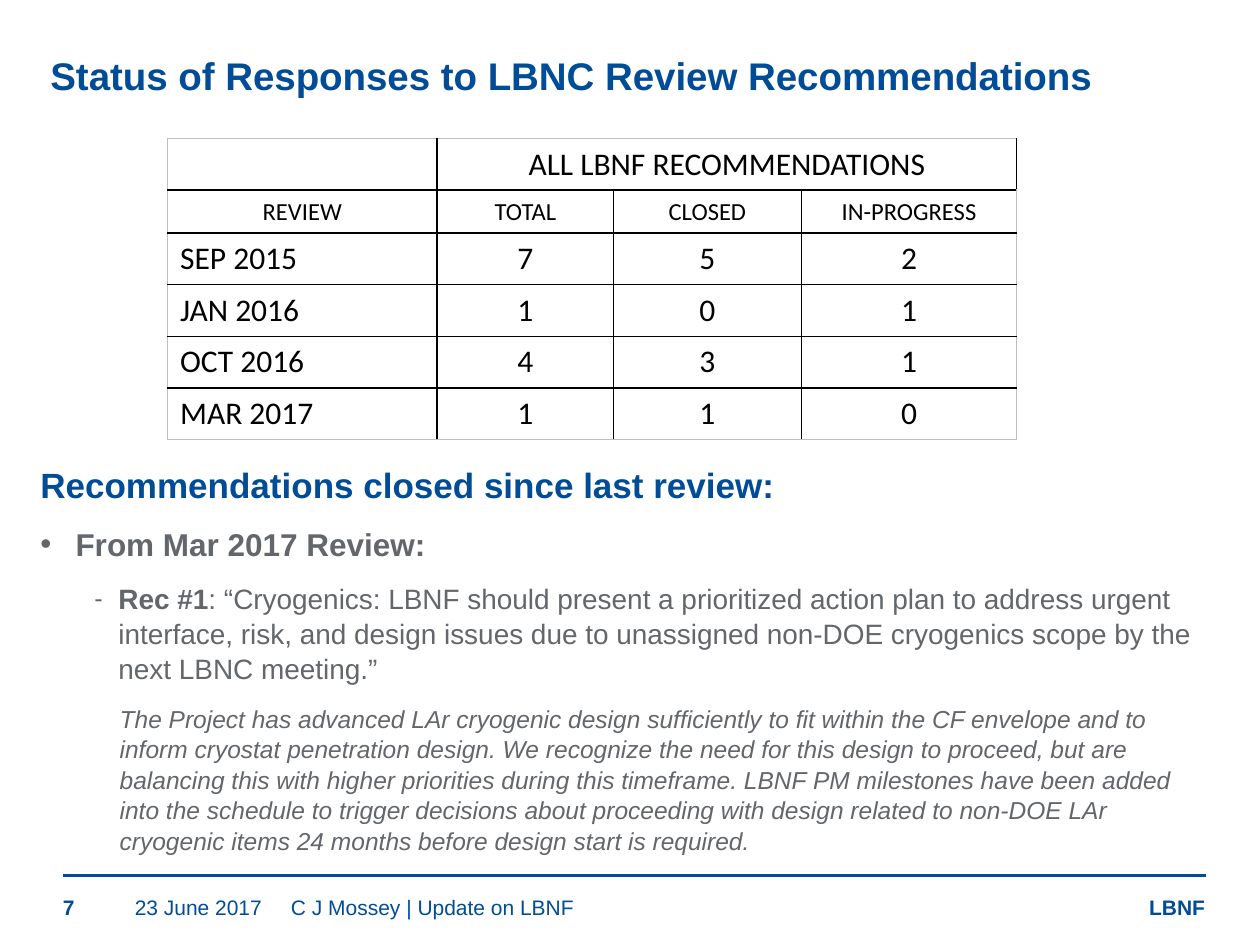
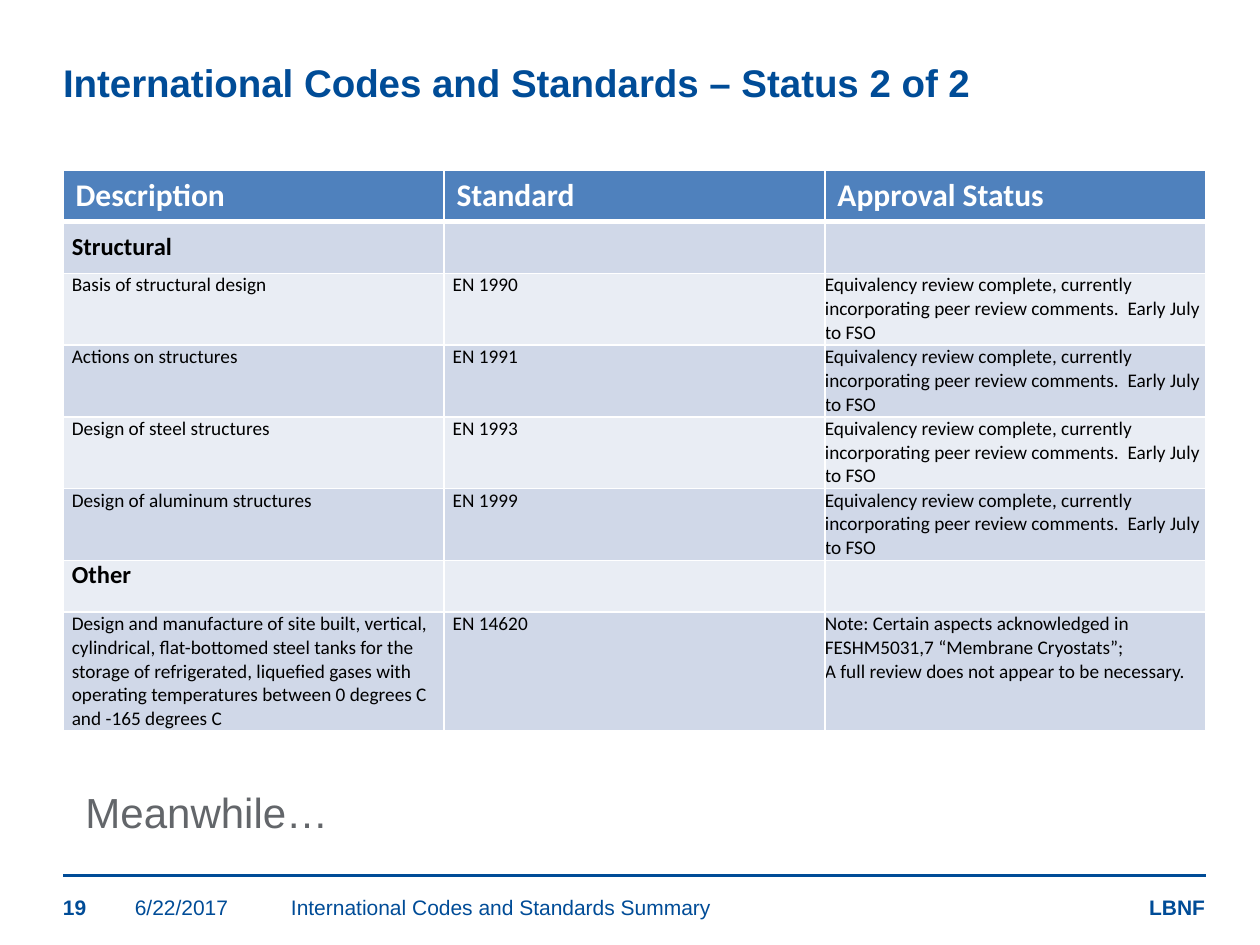
from lxml import etree
from pptx import Presentation
from pptx.dml.color import RGBColor
from pptx.enum import shapes, text
from pptx.oxml import ns
from pptx.util import Inches, Pt

NAVY = RGBColor(0x00, 0x4C, 0x97)
GRAY = RGBColor(0x63, 0x66, 0x6A)
BLACK = RGBColor(0x00, 0x00, 0x00)
WHITE = RGBColor(0xFF, 0xFF, 0xFF)
EDGE = RGBColor(0xBF, 0xBF, 0xBF)
HEADER_BLUE = RGBColor(0x4F, 0x81, 0xBD)
BANDS = (RGBColor(0xD0, 0xD8, 0xE8), RGBColor(0xE9, 0xED, 0xF4))
HEADING_FONT = "Arial"
TABLE_FONT = "Calibri"
LEFT, RIGHT = 0.5, 9.57
CENTER = text.PP_ALIGN.CENTER
TOP, MIDDLE, BOTTOM = (text.MSO_ANCHOR.TOP, text.MSO_ANCHOR.MIDDLE,
                       text.MSO_ANCHOR.BOTTOM)

REVIEWS = [
    ("SEP 2015", "7", "5", "2"),
    ("JAN 2016", "1", "0", "1"),
    ("OCT 2016", "4", "3", "1"),
    ("MAR 2017", "1", "1", "0"),
]
IN_REVIEW = ("Equivalency review complete, currently incorporating peer review "
             "comments.  Early July to FSO")
STANDARDS = [
    ("Structural",),
    ("Basis of structural design", "EN 1990", IN_REVIEW),
    ("Actions on structures", "EN 1991", IN_REVIEW),
    ("Design of steel structures", "EN 1993", IN_REVIEW),
    ("Design of aluminum structures", "EN 1999", IN_REVIEW),
    ("Other",),
    ("Design and manufacture of site built, vertical, cylindrical, flat-bottomed "
     "steel tanks for the storage of refrigerated, liquefied gases with operating "
     "temperatures between 0 degrees C and -165 degrees C", "EN 14620",
     "Note: Certain aspects acknowledged in FESHM5031,7 “Membrane Cryostats”;\n"
     "A full review does not appear to be necessary."),
]
RECOMMENDATION = (": “Cryogenics: LBNF should present a prioritized action plan to "
                  "address urgent interface, risk, and design issues due to unassigned "
                  "non-DOE cryogenics scope by the next LBNC meeting.”")
RESPONSE = ("The Project has advanced LAr cryogenic design sufficiently to fit within "
            "the CF envelope and to inform cryostat penetration design. We recognize "
            "the need for this design to proceed, but are balancing this with higher "
            "priorities during this timeframe. LBNF PM milestones have been added into "
            "the schedule to trigger decisions about proceeding with design related to "
            "non-DOE LAr cryogenic items 24 months before design start is required.")


def add_run(paragraph, words, size, color, bold=False, italic=False, font=HEADING_FONT):
    """Append one formatted run to a paragraph."""
    run = paragraph.add_run()
    run.text = words
    run.font.name = font
    run.font.size = Pt(size)
    run.font.color.rgb = color
    run.font.bold = bold
    run.font.italic = italic


def set_margins(holder, horizontal, vertical):
    """Set the inner margins of a text frame or table cell."""
    holder.margin_left = holder.margin_right = Inches(horizontal)
    holder.margin_top = holder.margin_bottom = Inches(vertical)


def add_text_box(slide, box, anchor=TOP, margins=(0, 0), wrap=True):
    """Add an empty text box and return its text frame."""
    frame = slide.shapes.add_textbox(*map(Inches, box)).text_frame
    frame.word_wrap = wrap
    frame.vertical_anchor = anchor
    set_margins(frame, *margins)
    return frame


def add_title(slide, box, words):
    """Place and format the title placeholder."""
    title = slide.shapes.title
    title.left, title.top, title.width, title.height = map(Inches, box)
    frame = title.text_frame
    frame.auto_size = text.MSO_AUTO_SIZE.NONE
    frame.vertical_anchor = TOP
    set_margins(frame, 0, 0)
    paragraph = frame.paragraphs[0]
    paragraph.alignment = text.PP_ALIGN.LEFT
    add_run(paragraph, words, 22, NAVY, bold=True)


def add_footer(slide, number, date, subject):
    """Draw the rule with the number, date, subject and project name under it."""
    rule = slide.shapes.add_connector(
        shapes.MSO_CONNECTOR.STRAIGHT,
        *map(Inches, (LEFT, 6.95, RIGHT, 6.95)))
    rule.line.color.rgb = NAVY
    rule.line.width = Pt(2)
    etree.SubElement(rule._element.spPr, ns.qn("a:effectLst"))
    for left, width, words, bold in (
            (LEFT, 0.57, number, True), (1.07, 1.24, date, False),
            (2.31, 6.14, subject, False), (9.12, 0.46, "LBNF", True)):
        frame = add_text_box(slide, (left, 7.1, width, 0.2), BOTTOM)
        add_run(frame.paragraphs[0], words, 12, NAVY, bold)


def set_borders(cell, left, right, top, bottom):
    """Draw the four cell borders, each given as a colour and a width."""
    properties = cell._tc.get_or_add_tcPr()
    for side, (color, width) in zip("LRTB", (left, right, top, bottom)):
        line = etree.SubElement(properties, ns.qn(f"a:ln{side}"), w=str(Pt(width)))
        fill = etree.SubElement(line, ns.qn("a:solidFill"))
        etree.SubElement(fill, ns.qn("a:srgbClr"), val=str(color))


def add_table(slide, left, top, widths, heights):
    """Add a table without built-in banding and return it."""
    table = slide.shapes.add_table(
        len(heights), len(widths),
        *map(Inches, (left, top, sum(widths), sum(heights)))).table
    table.first_row = table.horz_banding = False
    for column, width in zip(table.columns, widths):
        column.width = Inches(width)
    for row, height in zip(table.rows, heights):
        row.height = Inches(height)
    return table


def fill_cell(cell, words, size, color=BLACK, bold=False, alignment=None, anchor=TOP):
    """Write the lines of a table cell."""
    cell.vertical_anchor = anchor
    for index, line in enumerate(words.split("\n")):
        frame = cell.text_frame
        paragraph = frame.add_paragraph() if index else frame.paragraphs[0]
        paragraph.alignment = alignment
        if line:
            add_run(paragraph, line, size, color, bold, font=TABLE_FONT)
        else:
            paragraph.font.size = Pt(size)


def add_review_table(slide, left, top):
    """Build the grid of recommendation counts for each review."""
    rows = [("", "ALL LBNF RECOMMENDATIONS", "", ""),
            ("REVIEW", "TOTAL", "CLOSED", "IN-PROGRESS"), *REVIEWS]
    table = add_table(slide, left, top, (2.14, 1.4, 1.49, 1.71),
                      [0.34 if index == 1 else 0.41 for index in range(len(rows))])
    table.cell(0, 1).merge(table.cell(0, 3))
    inner, outer = (BLACK, 1), (EDGE, 1)
    for row, values in enumerate(rows):
        for column, value in enumerate(values):
            cell = table.cell(row, column)
            set_borders(cell,
                        inner if column else outer,
                        inner if column < 3 else outer,
                        inner if row else outer,
                        inner if row < len(rows) - 1 else outer)
            cell.fill.background()
            fill_cell(cell, value, 14 if row == 1 else 18,
                      alignment=CENTER if column or row < 2 else None,
                      anchor=MIDDLE if row < 2 else TOP)


def add_standards_table(slide, left, top):
    """Build the banded table of standards and their approval status."""
    table = add_table(slide, left, top, [(RIGHT - LEFT) / 3] * 3,
                      [0.41, 0.41] + [0.57] * 4 + [0.41, 0.94])
    thin, thick = (WHITE, 1), (WHITE, 3)
    for column, heading in enumerate(("Description", "Standard", "Approval Status")):
        cell = table.cell(0, column)
        set_borders(cell, thin, thin, thin, thick)
        cell.fill.solid()
        cell.fill.fore_color.rgb = HEADER_BLUE
        fill_cell(cell, heading, 18, WHITE, bold=True)
    for index, values in enumerate(STANDARDS):
        is_group = len(values) == 1
        for column in range(3):
            cell = table.cell(index + 1, column)
            set_borders(cell, thin, thin, thin if index else thick, thin)
            cell.fill.solid()
            cell.fill.fore_color.rgb = BANDS[index % 2]
            set_margins(cell, 0.07 if column < 2 else 0, 0)
            fill_cell(cell, values[column] if column < len(values) else "",
                      14 if is_group else 11, bold=is_group,
                      anchor=MIDDLE if index == 0 else TOP)


def add_closed_recommendations(slide, box):
    """Write the outline of recommendations closed since the last review."""
    frame = add_text_box(slide, box, margins=(0, 0.05))
    outline = [
        (0, 0, None, 100, [("Recommendations closed since last review:", 20, NAVY, True)]),
        (0.28, -0.28, "•", 100, [("From Mar 2017 Review:", 18, GRAY, True)]),
        (0.62, -0.19, "-", 90, [("Rec #1", 16, GRAY, True),
                                (RECOMMENDATION, 16, GRAY)]),
        (0.63, 0, None, 100, [(RESPONSE, 14, GRAY, False, True)]),
    ]
    for index, (margin, indent, bullet, bullet_size, runs) in enumerate(outline):
        paragraph = frame.add_paragraph() if index else frame.paragraphs[0]
        paragraph.space_after = Pt(10)
        paragraph.line_spacing = 1.04
        properties = paragraph._p.get_or_add_pPr()
        properties.set("marL", str(Inches(margin)))
        properties.set("indent", str(Inches(indent)))
        if bullet:
            color = etree.SubElement(properties, ns.qn("a:buClr"))
            etree.SubElement(color, ns.qn("a:srgbClr"), val=str(GRAY))
            etree.SubElement(properties, ns.qn("a:buSzPct"), val=str(bullet_size * 1000))
            etree.SubElement(properties, ns.qn("a:buFont"), typeface=HEADING_FONT)
            etree.SubElement(properties, ns.qn("a:buChar"), char=bullet)
        for run in runs:
            add_run(paragraph, *run)


def build_review_slide(slide):
    """Build the slide on responses to review recommendations."""
    add_title(slide, (0.4, 0.41, 9.07, 0.62),
              "Status of Responses to LBNC Review Recommendations")
    add_review_table(slide, 1.33, 1.1)
    add_closed_recommendations(slide, (0.32, 3.62, 9.24, 3.68))
    add_footer(slide, "7", "23 June 2017", "C J Mossey | Update on LBNF")


def build_standards_slide(slide):
    """Build the slide on codes and standards."""
    add_title(slide, (LEFT, 0.47, 9.07, 0.62),
              "International Codes and Standards – Status 2 of 2")
    add_standards_table(slide, LEFT, 1.35)
    frame = add_text_box(slide, (0.58, 6.19, 2.15, 0.5), margins=(0.1, 0.05), wrap=False)
    add_run(frame.paragraphs[0], "Meanwhile…", 24, GRAY)
    add_footer(slide, "19", "6/22/2017", "International Codes and Standards Summary")


def main():
    """Build both slides and save the presentation."""
    presentation = Presentation()
    presentation.slide_width = Inches(10)
    presentation.slide_height = Inches(7.5)
    title_only = presentation.slide_layouts[5]
    for build in (build_review_slide, build_standards_slide):
        build(presentation.slides.add_slide(title_only))
    presentation.save("out.pptx")


if __name__ == "__main__":
    main()
